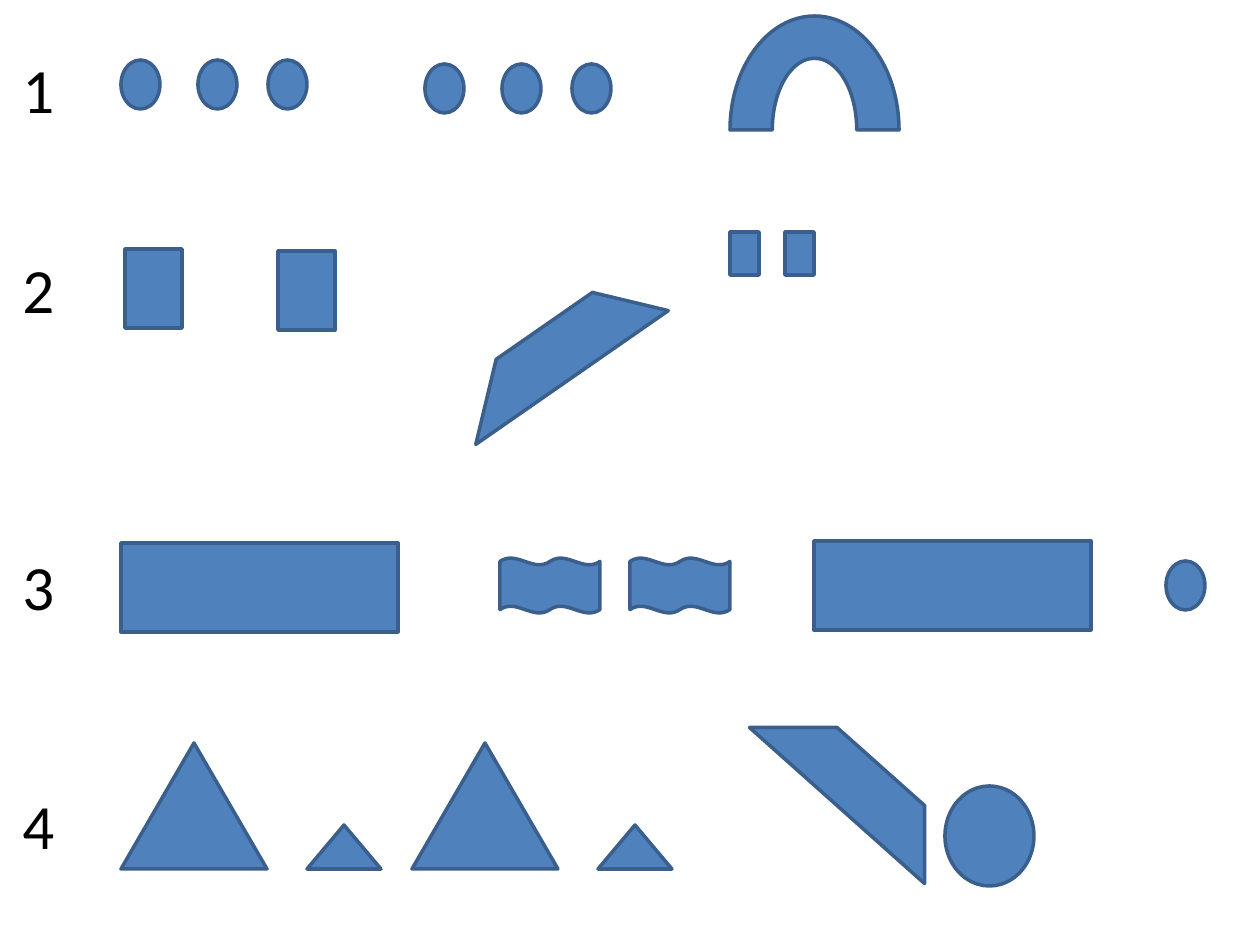
from pptx import Presentation
from pptx.dml.color import RGBColor
from pptx.enum.shapes import MSO_SHAPE
from pptx.enum.text import MSO_AUTO_SIZE
from pptx.util import Emu, Pt

OVAL = MSO_SHAPE.OVAL
RECTANGLE = MSO_SHAPE.RECTANGLE
TRIANGLE = MSO_SHAPE.ISOSCELES_TRIANGLE
WAVE = MSO_SHAPE.DOUBLE_WAVE
STRIPE = MSO_SHAPE.DIAGONAL_STRIPE
ARCH = MSO_SHAPE.BLOCK_ARC
FIT_SHAPE = MSO_AUTO_SIZE.SHAPE_TO_FIT_TEXT

PX_PER_INCH = 126
COLORS = {"fill": "4F81BD", "outline": "3A5F8C", "number": "000000"}
FONT = "Calibri"
BLANK_LAYOUT = 6

DOT = (39, 49)
SQUARE = (57, 79)
SMALL_SQUARE = (29, 43)
BAR = (277, 89)
FLAG = (100, 55)
BIG_TRIANGLE = (146, 126)
SMALL_TRIANGLE = (74, 44)
BAND = (156, 175)


def px(length):
    return Emu(round(length * 914400 / PX_PER_INCH))


def color(name):
    return RGBColor.from_string(COLORS[name])


def add_figure(slide, preset, left, top, size, rotation=0):
    figure = slide.shapes.add_shape(preset, px(left), px(top), *map(px, size))
    figure.rotation = rotation
    figure.shadow.inherit = False
    figure.fill.solid()
    figure.fill.fore_color.rgb = color("fill")
    figure.line.color.rgb = color("outline")
    figure.line.width = Pt(2)


def add_row_number(slide, number, top):
    label = slide.shapes.add_textbox(px(10), px(top), px(88), px(89))
    frame = label.text_frame
    frame.word_wrap = True
    frame.auto_size = FIT_SHAPE
    run = frame.paragraphs[0].add_run()
    run.text = str(number)
    run.font.size = Pt(36)
    run.font.name = FONT
    run.font.color.rgb = color("number")


def add_dots_and_arch(slide):
    for group_left, top in ((121, 60), (425, 64)):
        for offset in (0, 77, 147):
            add_figure(slide, OVAL, group_left + offset, top, DOT)
    add_figure(slide, ARCH, 730, 16, (169, 228))


def add_squares_and_band(slide):
    add_figure(slide, RECTANGLE, 125, 249, SQUARE)
    add_figure(slide, RECTANGLE, 278, 251, SQUARE)
    add_figure(slide, STRIPE, 494, 290, BAND, 13.5)
    for left in (730, 785):
        add_figure(slide, RECTANGLE, left, 232, SMALL_SQUARE)


def add_bars_and_flags(slide):
    add_figure(slide, RECTANGLE, 121, 543, BAR)
    for left in (500, 630):
        add_figure(slide, WAVE, left, 558, FLAG)
    add_figure(slide, RECTANGLE, 814, 541, BAR)
    add_figure(slide, OVAL, 1166, 561, DOT)


def add_triangles_and_band(slide):
    for left in (121, 412):
        add_figure(slide, TRIANGLE, left, 743, BIG_TRIANGLE)
        add_figure(slide, TRIANGLE, left + 186, 825, SMALL_TRIANGLE)
    add_figure(slide, STRIPE, 759, 718, BAND, 90)
    add_figure(slide, OVAL, 945, 786, (89, 100))


def main():
    deck = Presentation()
    deck.slide_width = px(1260)
    deck.slide_height = px(945)
    slide = deck.slides.add_slide(deck.slide_layouts[BLANK_LAYOUT])
    rows = (
        (44, add_dots_and_arch),
        (244, add_squares_and_band),
        (541, add_bars_and_flags),
        (780, add_triangles_and_band),
    )
    for number, (top, add_figures) in enumerate(rows, start=1):
        add_row_number(slide, number, top)
        add_figures(slide)
    deck.save("out.pptx")


if __name__ == "__main__":
    main()
